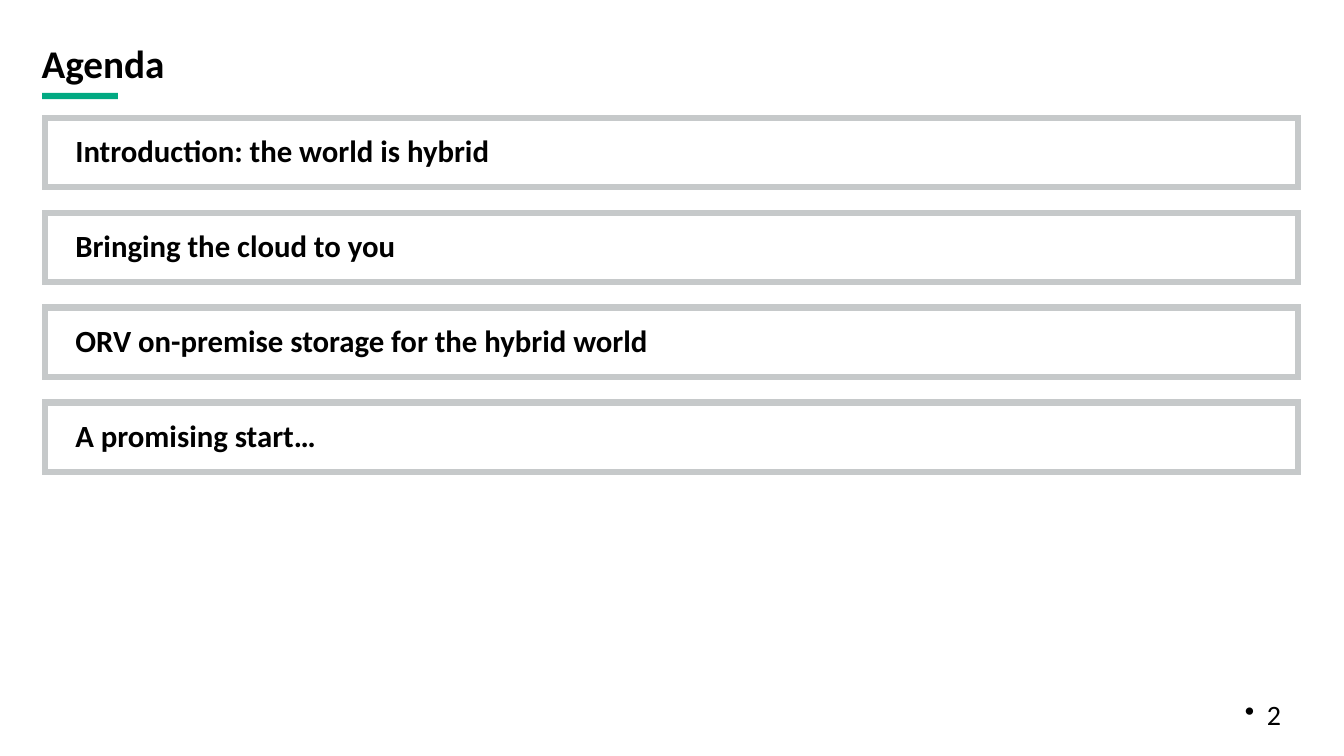
"""Build the agenda slide with its four framed topics."""

import dataclasses

import lxml.etree
import pptx
import pptx.dml.color
import pptx.enum.shapes
import pptx.enum.text
import pptx.oxml.ns
import pptx.shapes.autoshape
import pptx.slide
import pptx.text.text
import pptx.util

Cm = pptx.util.Cm
FONT = "Calibri"
BLACK = "000000"
GREEN = "01A982"
GREY = "C6C9CA"
TOPICS = (
    "Introduction: the world is hybrid",
    "Bringing the cloud to you",
    "ORV on-premise storage for the hybrid world",
    "A promising start…",
)
TOPIC_TOP = 2.97
TOPIC_PITCH = 2.39


@dataclasses.dataclass(frozen=True)
class Box:
    left: float
    top: float
    width: float
    height: float


@dataclasses.dataclass(frozen=True)
class Label:
    text: str
    size: float
    bold: bool = True
    side_inset: float = 0.25


def color(value: str) -> pptx.dml.color.RGBColor:
    return pptx.dml.color.RGBColor.from_string(value)


def place(box: Box) -> tuple[pptx.util.Length, ...]:
    return Cm(box.left), Cm(box.top), Cm(box.width), Cm(box.height)


def add_rectangle(
    slide: pptx.slide.Slide, box: Box, fill: str | None = None, line: str | None = None
) -> pptx.shapes.autoshape.Shape:
    shape = slide.shapes.add_shape(
        pptx.enum.shapes.MSO_SHAPE.RECTANGLE, *place(box)
    )
    shape.shadow.inherit = False
    if fill:
        shape.fill.solid()
        shape.fill.fore_color.rgb = color(fill)
    else:
        shape.fill.background()
    if line:
        shape.line.color.rgb = color(line)
        shape.line.width = pptx.util.Pt(4.5)
        outline = shape._element.spPr.find(pptx.oxml.ns.qn("a:ln"))
        miter = lxml.etree.SubElement(outline, pptx.oxml.ns.qn("a:miter"))
        miter.set("lim", "800000")
    else:
        shape.line.fill.background()
    return shape


def add_bullet(paragraph: pptx.text.text._Paragraph) -> None:
    properties = paragraph._p.get_or_add_pPr()
    properties.set("marL", str(Cm(0.56)))
    properties.set("indent", str(Cm(-0.56)))
    bullet = lxml.etree.SubElement(properties, pptx.oxml.ns.qn("a:buChar"))
    bullet.set("char", "•")


def write(
    shape: pptx.shapes.autoshape.Shape, label: Label, bulleted: bool = False
) -> None:
    frame = shape.text_frame
    frame.word_wrap = True
    frame.vertical_anchor = pptx.enum.text.MSO_ANCHOR.MIDDLE
    frame.margin_left = frame.margin_right = Cm(label.side_inset)
    frame.margin_top = frame.margin_bottom = Cm(0.13)
    frame.text = label.text
    paragraph = frame.paragraphs[0]
    if bulleted:
        add_bullet(paragraph)
    paragraph.alignment = pptx.enum.text.PP_ALIGN.LEFT
    paragraph.line_spacing = 0.9
    font = paragraph.runs[0].font
    font.name = FONT
    font.size = pptx.util.Pt(label.size)
    font.bold = label.bold
    font.color.rgb = color(BLACK)


def main() -> None:
    presentation = pptx.Presentation()
    presentation.slide_width = Cm(33.87)
    presentation.slide_height = Cm(19.05)
    slide = presentation.slides.add_slide(presentation.slide_layouts[6])

    add_rectangle(slide, Box(1.06, 2.34, 1.91, 0.16), fill=GREEN)

    title = slide.shapes.add_textbox(*place(Box(0.8, 1.09, 31.93, 1.12)))
    write(title, Label("Agenda", 28))

    for index, topic in enumerate(TOPICS):
        box = Box(1.14, TOPIC_TOP + index * TOPIC_PITCH, 31.57, 1.75)
        write(add_rectangle(slide, box, line=GREY), Label(topic, 22, side_inset=0.76))

    page_number = slide.shapes.add_textbox(*place(Box(31.12, 17.55, 1.91, 1.02)))
    write(page_number, Label("2", 20, bold=False), bulleted=True)

    presentation.save("out.pptx")


if __name__ == "__main__":
    main()
